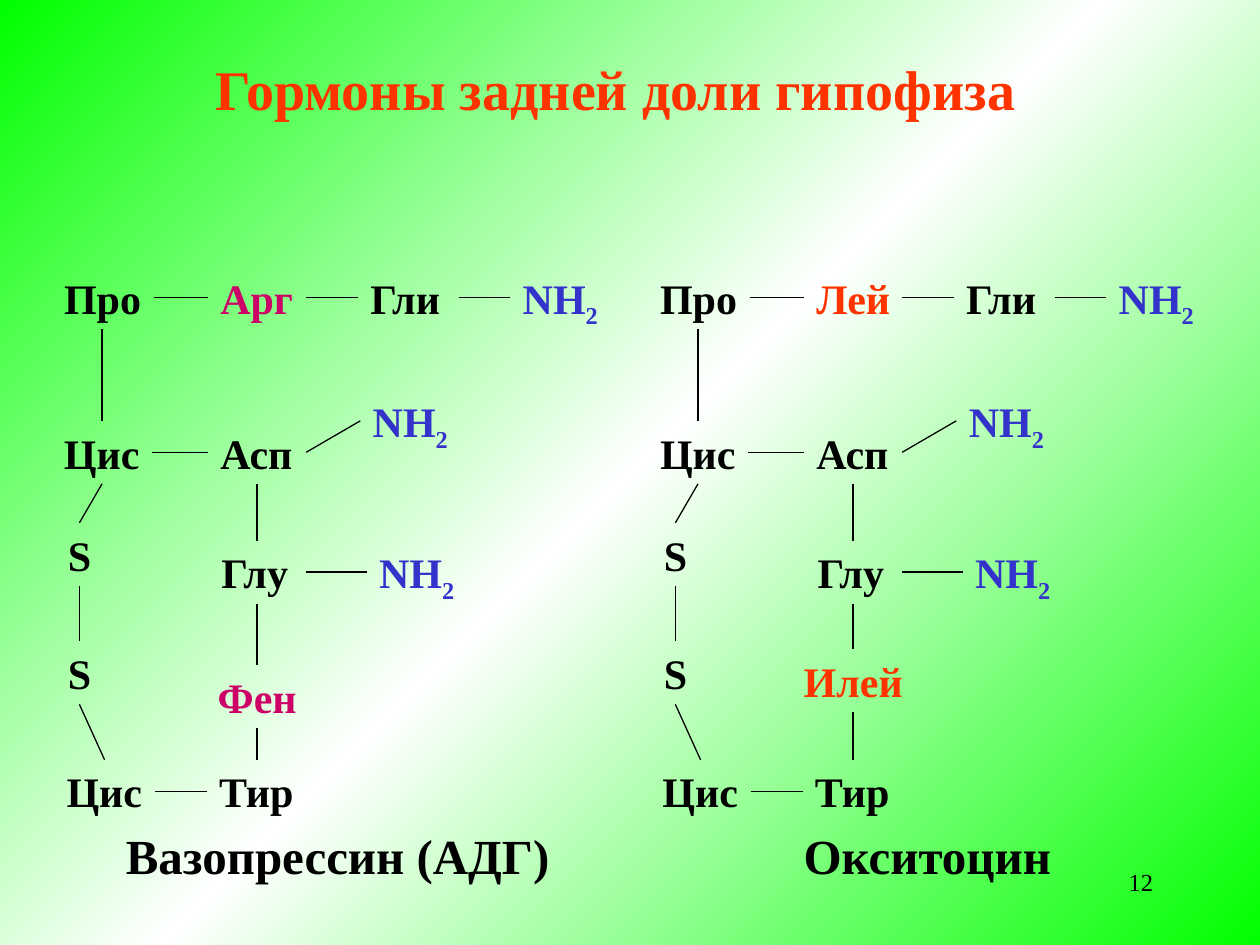
from copy import deepcopy

from lxml.etree import SubElement
from pptx import Presentation
from pptx.dml.color import RGBColor
from pptx.enum.shapes import MSO_CONNECTOR as Connector
from pptx.enum.text import MSO_ANCHOR as Anchor, MSO_AUTO_SIZE as AutoSize, PP_ALIGN as Align
from pptx.oxml.ns import qn
from pptx.util import Inches, Pt

BLACK, RED, CRIMSON, BLUE, GREEN, WHITE = "000000", "FF3300", "CC0066", "3333CC", "00FF00", "FFFFFF"
FRAME_FORMAT = {"word_wrap": False, "auto_size": AutoSize.SHAPE_TO_FIT_TEXT, "vertical_anchor": Anchor.TOP}


def rgb(code):
    return RGBColor.from_string(code)


def write(label, text, box, size=24, colour=BLACK, bold=True, align=Align.LEFT):
    for side, length in zip(("left", "top", "width", "height"), box):
        setattr(label, side, Inches(length))
    for name, value in FRAME_FORMAT.items():
        setattr(label.text_frame, name, value)
    paragraph = label.text_frame.paragraphs[0]
    paragraph.alignment = align
    for part in ("NH", "2") if text == "NH2" else (text,):
        run = paragraph.add_run()
        run.text = part
        for name, value in {"name": "Times New Roman", "size": Pt(size), "bold": bold}.items():
            setattr(run.font, name, value)
        run.font.color.rgb = rgb(colour)
        if part == "2":
            run._r.get_or_add_rPr().set("baseline", "-25000")


prs = Presentation()
prs.slide_width, prs.slide_height = Inches(10), Inches(7.5)
slide = prs.slides.add_slide(prs.slide_layouts[5])
shapes = slide.shapes

backdrop = slide.background.fill
backdrop.gradient()
backdrop.gradient_angle = 315
stop_list = next(slide._element.iter(qn("a:gsLst")))
stop_list.append(deepcopy(stop_list[0]))
for stop, position, shade in zip(backdrop.gradient_stops, (0, 0.5, 1), (GREEN, WHITE, GREEN)):
    stop.position = position
    stop.color.rgb = rgb(shade)

write(shapes.title, "Гормоны задней доли гипофиза", (1.61, 0.38, 6.61, 0.63), 32, RED)

COMMON_RESIDUES = [
    ("Про", 0.41, 2.11, 0.81, BLACK),
    ("Гли", 2.84, 2.11, 0.79, BLACK),
    ("NH2", 4.05, 2.11, 0.81, BLUE),
    ("Цис", 0.41, 3.34, 0.8, BLACK),
    ("Асп", 1.65, 3.34, 0.78, BLACK),
    ("NH2", 2.86, 3.09, 0.81, BLUE),
    ("S", 0.44, 4.15, 0.39, BLACK),
    ("Глу", 1.66, 4.29, 0.77, BLACK),
    ("NH2", 2.91, 4.29, 0.81, BLUE),
    ("S", 0.44, 5.09, 0.39, BLACK),
    ("Цис", 0.43, 6.03, 0.8, BLACK),
    ("Тир", 1.64, 6.03, 0.8, BLACK),
]
COMMON_BONDS = [
    (1.22, 2.36, 1.65, 2.36),
    (2.43, 2.36, 2.84, 2.36),
    (3.64, 2.36, 4.05, 2.36),
    (0.81, 2.61, 0.81, 3.34),
    (1.21, 3.59, 1.65, 3.59),
    (2.43, 3.59, 2.86, 3.34),
    (0.81, 3.84, 0.63, 4.15),
    (2.04, 3.84, 2.04, 4.29),
    (2.43, 4.54, 2.91, 4.54),
    (0.63, 4.65, 0.63, 5.09),
    (0.63, 5.59, 0.83, 6.03),
    (1.23, 6.28, 1.64, 6.28),
]
HORMONES = [
    (0, "Вазопрессин (АДГ)", 0.9, 3.56, CRIMSON, ("Арг", 1.65, 0.78), ("Фен", 1.63, 5.28, 0.83)),
    (4.73, "Окситоцин", 1.54, 2.18, RED, ("Лей", 1.65, 0.79), ("Илей", 1.55, 5.15, 0.99)),
]

for shift, hormone, name_left, name_width, accent, upper, lower in HORMONES:
    upper_name, upper_left, upper_width = upper
    lower_top = lower[2]
    residues = COMMON_RESIDUES + [
        (upper_name, upper_left, 2.11, upper_width, accent),
        (*lower, accent),
    ]
    for residue, left, top, width, colour in residues:
        box = (left + shift, top, width, 0.5)
        write(shapes.add_textbox(0, 0, 0, 0), residue, box, colour=colour)

    bonds = COMMON_BONDS + [
        (2.04, 4.79, 2.04, lower_top),
        (2.04, lower_top + 0.5, 2.04, 6.03),
    ]
    for x1, y1, x2, y2 in bonds:
        bond = shapes.add_connector(
            Connector.STRAIGHT, Inches(x1 + shift), Inches(y1), Inches(x2 + shift), Inches(y2))
        bond.line.width = Pt(0.75)
        bond.line.color.rgb = rgb(BLACK)
        SubElement(bond._element.spPr, qn("a:effectLst"))

    write(shapes.add_textbox(0, 0, 0, 0), hormone, (name_left + shift, 6.5, name_width, 0.57), 28,
          align=Align.CENTER)

FRAME_FORMAT.update(word_wrap=True, auto_size=AutoSize.NONE)
write(shapes.add_textbox(0, 0, 0, 0), "12", (7.17, 6.83, 2.08, 0.5), 14, bold=False, align=Align.RIGHT)

prs.save("out.pptx")
